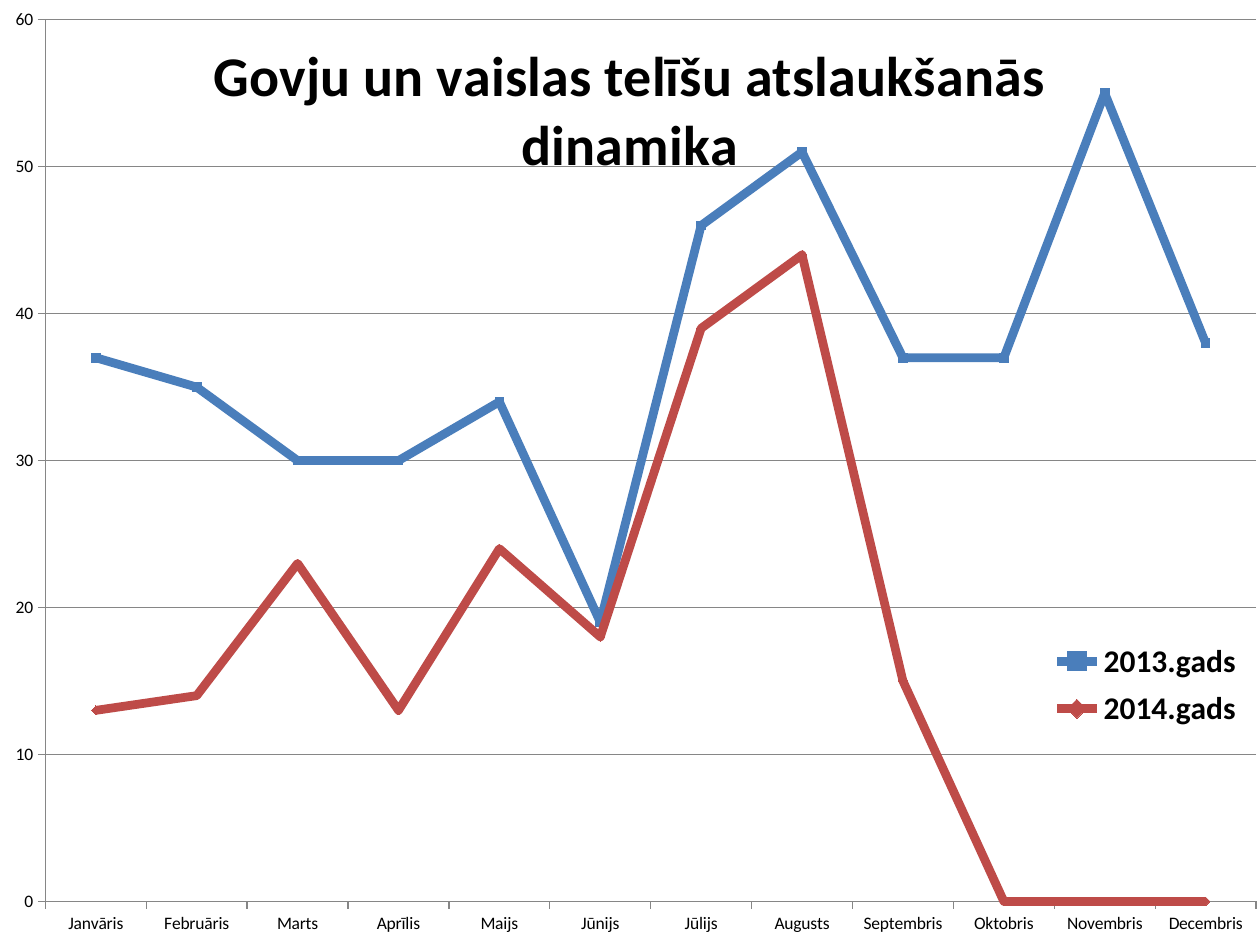
from dataclasses import dataclass

from lxml.etree import SubElement
from pptx import Presentation
from pptx.chart.data import CategoryChartData
from pptx.dml.color import RGBColor
from pptx.enum.chart import XL_CHART_TYPE as ChartType
from pptx.enum.chart import XL_LEGEND_POSITION as LegendPosition
from pptx.enum.chart import XL_MARKER_STYLE as Marker
from pptx.enum.chart import XL_TICK_MARK as TickMark
from pptx.oxml.ns import qn
from pptx.util import Pt

WIDTH, HEIGHT = Pt(720), Pt(540)
FONT = "Calibri"
COLORS = {"text": "000000", "axis": "868686", "blue": "4A7EBB", "red": "BE4B48"}
MONTHS = ["Janvāris", "Februāris", "Marts", "Aprīlis", "Maijs", "Jūnijs", "Jūlijs",
          "Augusts", "Septembris", "Oktobris", "Novembris", "Decembris"]


@dataclass
class Year:
    name: str
    counts: list
    color: str
    marker: Marker


YEARS = [
    Year("2013.gads", [37, 35, 30, 30, 34, 19, 46, 51, 37, 37, 55, 38], "blue", Marker.SQUARE),
    Year("2014.gads", [13, 14, 23, 13, 24, 18, 39, 44, 15, None, None, None], "red", Marker.DIAMOND),
]


def rgb(name: str) -> RGBColor:
    return RGBColor.from_string(COLORS[name])


def set_font(font, size: float, bold: bool = False, color: str = "text") -> None:
    font.name, font.size, font.bold = FONT, Pt(size), bold
    font.color.rgb = rgb(color)


def write_text(frame, text: str, **font_format) -> None:
    run = frame.paragraphs[0].add_run()
    run.text = text
    set_font(run.font, **font_format)


def set_layout(parent, before: str, inner: bool = False, **fractions: float) -> None:
    """Place a chart part by fractions of the chart, ahead of the named sibling."""
    for old in parent.findall(qn("c:layout")):
        parent.remove(old)
    layout = SubElement(parent, qn("c:layout"))
    parent.find(qn(before)).addprevious(layout)
    manual = SubElement(layout, qn("c:manualLayout"))
    if inner:
        SubElement(manual, qn("c:layoutTarget")).set("val", "inner")
    for key in ("x", "y"):
        SubElement(manual, qn(f"c:{key}Mode")).set("val", "edge")
    for key, fraction in fractions.items():
        SubElement(manual, qn(f"c:{key}")).set("val", str(fraction))


def style_axis(axis) -> None:
    axis.major_tick_mark = TickMark.OUTSIDE
    axis.minor_tick_mark = TickMark.NONE
    axis.format.line.color.rgb = rgb("axis")
    set_font(axis.tick_labels.font, 10)


def style_year(series, year: Year) -> None:
    series.smooth = False
    series.format.line.color.rgb = rgb(year.color)
    series.format.line.width = Pt(5)
    series.marker.style, series.marker.size = year.marker, 5
    series.marker.format.fill.solid()
    series.marker.format.fill.fore_color.rgb = rgb(year.color)
    series.marker.format.line.color.rgb = rgb(year.color)


def add_milking_chart(slide) -> None:
    milking = CategoryChartData()
    milking.categories = MONTHS
    for year in YEARS:
        milking.add_series(year.name, year.counts)
    chart = slide.shapes.add_chart(ChartType.LINE_MARKERS, 0, 0, WIDTH, HEIGHT, milking).chart
    set_font(chart.font, 10)
    plot = chart.plots[0]
    plot.vary_by_categories = False
    for series, year in zip(plot.series, YEARS):
        style_year(series, year)

    for axis in (chart.category_axis, chart.value_axis):
        style_axis(axis)
    counts = chart.value_axis
    counts.minimum_scale, counts.maximum_scale, counts.major_unit = 0, 60, 10
    counts.has_major_gridlines = True
    counts.major_gridlines.format.line.color.rgb = rgb("axis")

    chart.has_title = True
    title = chart.chart_title
    write_text(title.text_frame, "Govju un vaislas telīšu atslaukšanās dinamika", size=32, bold=True)
    title.include_in_layout = True
    chart.has_legend = True
    legend = chart.legend
    legend.position, legend.include_in_layout = LegendPosition.RIGHT, True
    set_font(legend.font, 18, bold=True)

    root = chart.element.find(qn("c:chart"))
    set_layout(root.find(qn("c:plotArea")), "c:lineChart", True, x=0.036, y=0.021, w=0.961, h=0.933)
    set_layout(root.find(qn("c:legend")), "c:overlay", x=0.83, y=0.67, w=0.16, h=0.11)
    # Months without a count are drawn as zero.
    root.find(qn("c:dispBlanksAs")).set("val", "zero")


def main() -> None:
    deck = Presentation()
    deck.slide_width, deck.slide_height = WIDTH, HEIGHT
    add_milking_chart(deck.slides.add_slide(deck.slide_layouts[6]))
    deck.save("out.pptx")


if __name__ == "__main__":
    main()
